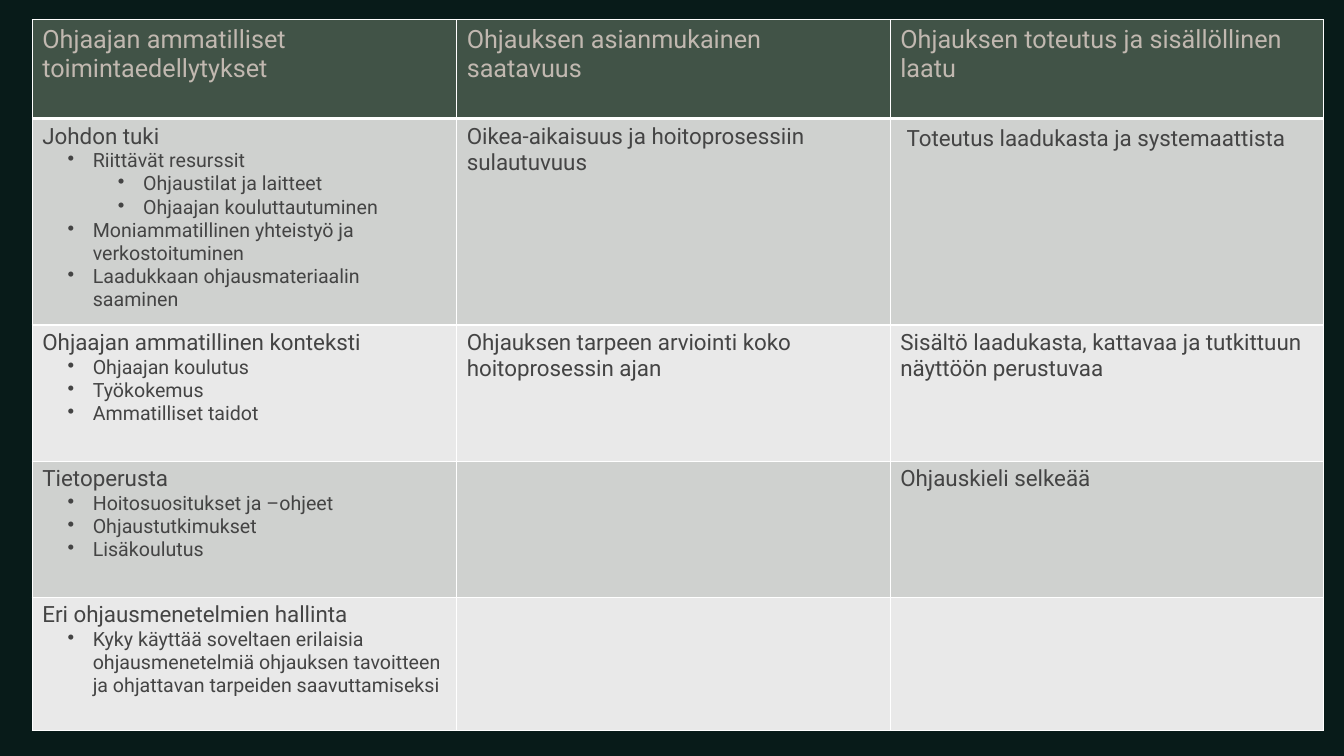
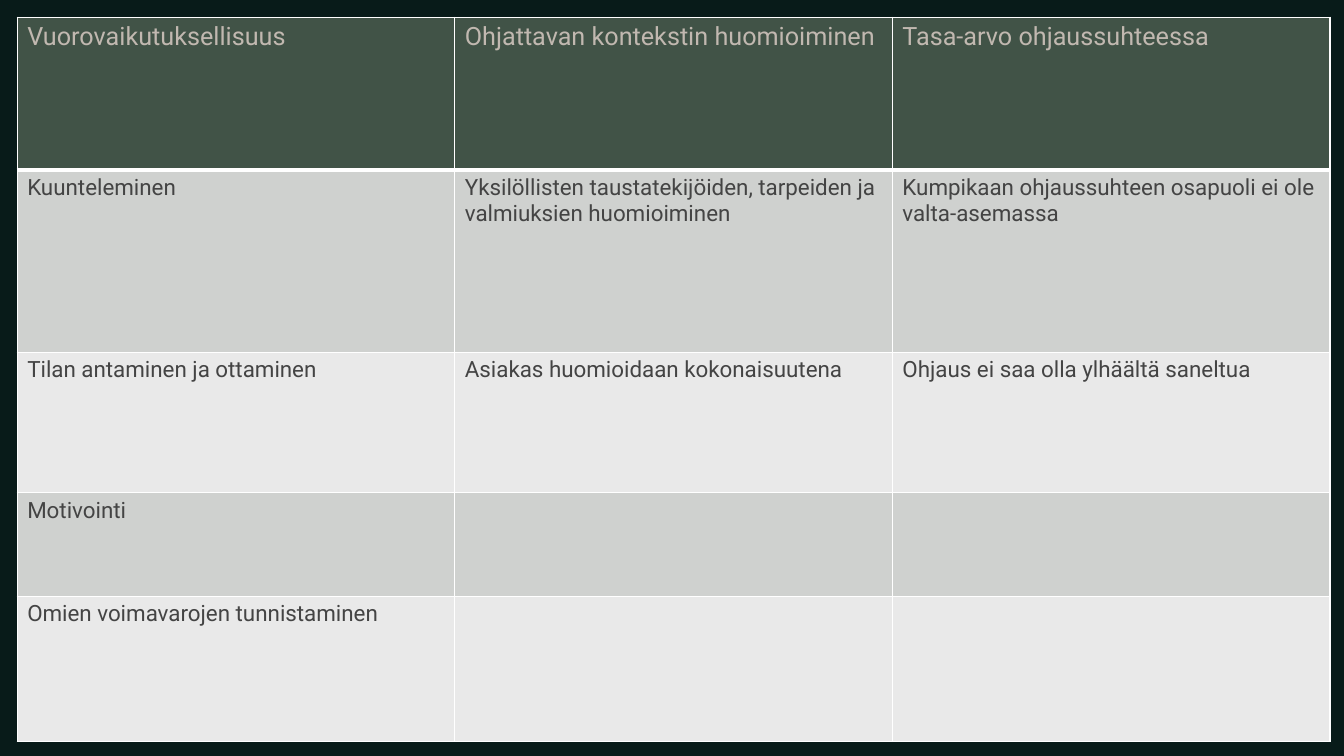
from lxml import etree
from pptx import Presentation
from pptx.dml.color import RGBColor
from pptx.oxml.ns import qn
from pptx.util import Inches, Pt

SLIDE_WIDTH = Inches(13.33)
SLIDE_HEIGHT = Inches(7.5)
BLANK_LAYOUT = 6
FONT = "Roboto"
COLORS = {
    "background": "081B19",
    "header": "415347",
    "header_text": "C1B8B0",
    "body_text": "444444",
    "odd_row": "CFD1CF",
    "even_row": "E9E9E9",
    "border": "FFFFFF",
}
HEADER_SIZE = 18
LEVEL_SIZES = (16, 14, 14)
LEVEL_INDENT = Inches(0.5)
BULLET_HANG = Inches(0.25)
THIN, THICK = Pt(1), Pt(3)

QUALITY_TABLE = {
    "left": 2.4,
    "top": 2.6,
    "columns": (31.58, 32.26, 32.26),
    "rows": (13.07, 27.33, 18, 18, 17.6),
    "cells": [
        [
            "Ohjaajan ammatilliset toimintaedellytykset",
            "Ohjauksen asianmukainen saatavuus",
            "Ohjauksen toteutus ja sisällöllinen laatu",
        ],
        [
            [
                (0, "Johdon tuki"),
                (1, "Riittävät resurssit"),
                (2, "Ohjaustilat ja laitteet"),
                (2, "Ohjaajan kouluttautuminen"),
                (1, "Moniammatillinen yhteistyö ja verkostoituminen"),
                (1, "Laadukkaan ohjausmateriaalin saaminen"),
            ],
            "Oikea-aikaisuus ja hoitoprosessiin sulautuvuus",
            [(0, [(" ", 18), ("Toteutus laadukasta ja systemaattista", 16)])],
        ],
        [
            [
                (0, "Ohjaajan ammatillinen konteksti"),
                (1, "Ohjaajan koulutus"),
                (1, "Työkokemus"),
                (1, "Ammatilliset taidot"),
            ],
            "Ohjauksen tarpeen arviointi koko hoitoprosessin ajan",
            "Sisältö laadukasta, kattavaa ja tutkittuun näyttöön perustuvaa",
        ],
        [
            [
                (0, "Tietoperusta"),
                (1, "Hoitosuositukset ja –ohjeet"),
                (1, "Ohjaustutkimukset"),
                (1, "Lisäkoulutus"),
            ],
            "",
            "Ohjauskieli selkeää",
        ],
        [
            [
                (0, "Eri ohjausmenetelmien hallinta"),
                (1, "Kyky käyttää soveltaen erilaisia ohjausmenetelmiä ohjauksen "
                    "tavoitteen ja ohjattavan tarpeiden saavuttamiseksi"),
            ],
            "",
            "",
        ],
    ],
}

INTERACTION_TABLE = {
    "left": 1.28,
    "top": 2.27,
    "columns": (32.56,) * 3,
    "rows": (20.2, 24.13, 18.53, 13.75, 19.2),
    "cells": [
        [
            "Vuorovaikutuksellisuus",
            "Ohjattavan kontekstin huomioiminen",
            "Tasa-arvo ohjaussuhteessa",
        ],
        [
            "Kuunteleminen",
            "Yksilöllisten taustatekijöiden, tarpeiden ja valmiuksien huomioiminen",
            "Kumpikaan ohjaussuhteen osapuoli ei ole valta-asemassa",
        ],
        [
            "Tilan antaminen ja ottaminen",
            "Asiakas huomioidaan kokonaisuutena",
            "Ohjaus ei saa olla ylhäältä saneltua",
        ],
        ["Motivointi", "", ""],
        ["Omien voimavarojen tunnistaminen", "", ""],
    ],
}


def color(name):
    return RGBColor.from_string(COLORS[name])


def across(percent):
    return round(SLIDE_WIDTH * percent / 100)


def down(percent):
    return round(SLIDE_HEIGHT * percent / 100)


def add_slide(presentation):
    slide = presentation.slides.add_slide(presentation.slide_layouts[BLANK_LAYOUT])
    slide.background.fill.solid()
    slide.background.fill.fore_color.rgb = color("background")
    return slide


def set_borders(cell, row_number):
    widths = {
        "a:lnL": THIN,
        "a:lnR": THIN,
        "a:lnT": THICK if row_number == 1 else THIN,
        "a:lnB": THICK if row_number == 0 else THIN,
    }
    properties = cell._tc.get_or_add_tcPr()
    for tag, width in widths.items():
        line = etree.SubElement(properties, qn(tag), w=str(width))
        fill = etree.SubElement(line, qn("a:solidFill"))
        etree.SubElement(fill, qn("a:srgbClr"), val=COLORS["border"])


def set_bullet(paragraph, level):
    properties = paragraph._p.get_or_add_pPr()
    properties.set("marL", str(LEVEL_INDENT * level))
    properties.set("indent", str(-BULLET_HANG))
    etree.SubElement(properties, qn("a:buChar"), char="•")
    paragraph.level = level


def add_run(paragraph, text, size, color_name):
    run = paragraph.add_run()
    run.text = text
    run.font.name = FONT
    run.font.size = Pt(size)
    run.font.bold = False
    run.font.color.rgb = color(color_name)


def write_cell(cell, content, is_header):
    if not content:
        return
    entries = [(0, content)] if isinstance(content, str) else content
    color_name = "header_text" if is_header else "body_text"
    for number, (level, text) in enumerate(entries):
        frame = cell.text_frame
        paragraph = frame.add_paragraph() if number else frame.paragraphs[0]
        if level:
            set_bullet(paragraph, level)
        size = HEADER_SIZE if is_header else LEVEL_SIZES[level]
        runs = [(text, size)] if isinstance(text, str) else text
        for run_text, run_size in runs:
            add_run(paragraph, run_text, run_size, color_name)


def add_criteria_table(slide, layout):
    widths = [across(share) for share in layout["columns"]]
    heights = [down(share) for share in layout["rows"]]
    table = slide.shapes.add_table(
        len(heights), len(widths), across(layout["left"]), down(layout["top"]),
        sum(widths), sum(heights),
    ).table
    table.horz_banding = False
    for column, width in zip(table.columns, widths):
        column.width = width
    for row_number, contents in enumerate(layout["cells"]):
        row = table.rows[row_number]
        row.height = heights[row_number]
        is_header = row_number == 0
        band = "odd_row" if row_number % 2 else "even_row"
        for cell, content in zip(row.cells, contents):
            set_borders(cell, row_number)
            cell.fill.solid()
            cell.fill.fore_color.rgb = color("header" if is_header else band)
            write_cell(cell, content, is_header)


def main():
    presentation = Presentation()
    presentation.slide_width = SLIDE_WIDTH
    presentation.slide_height = SLIDE_HEIGHT
    for layout in (QUALITY_TABLE, INTERACTION_TABLE):
        add_criteria_table(add_slide(presentation), layout)
    presentation.save("out.pptx")


if __name__ == "__main__":
    main()
